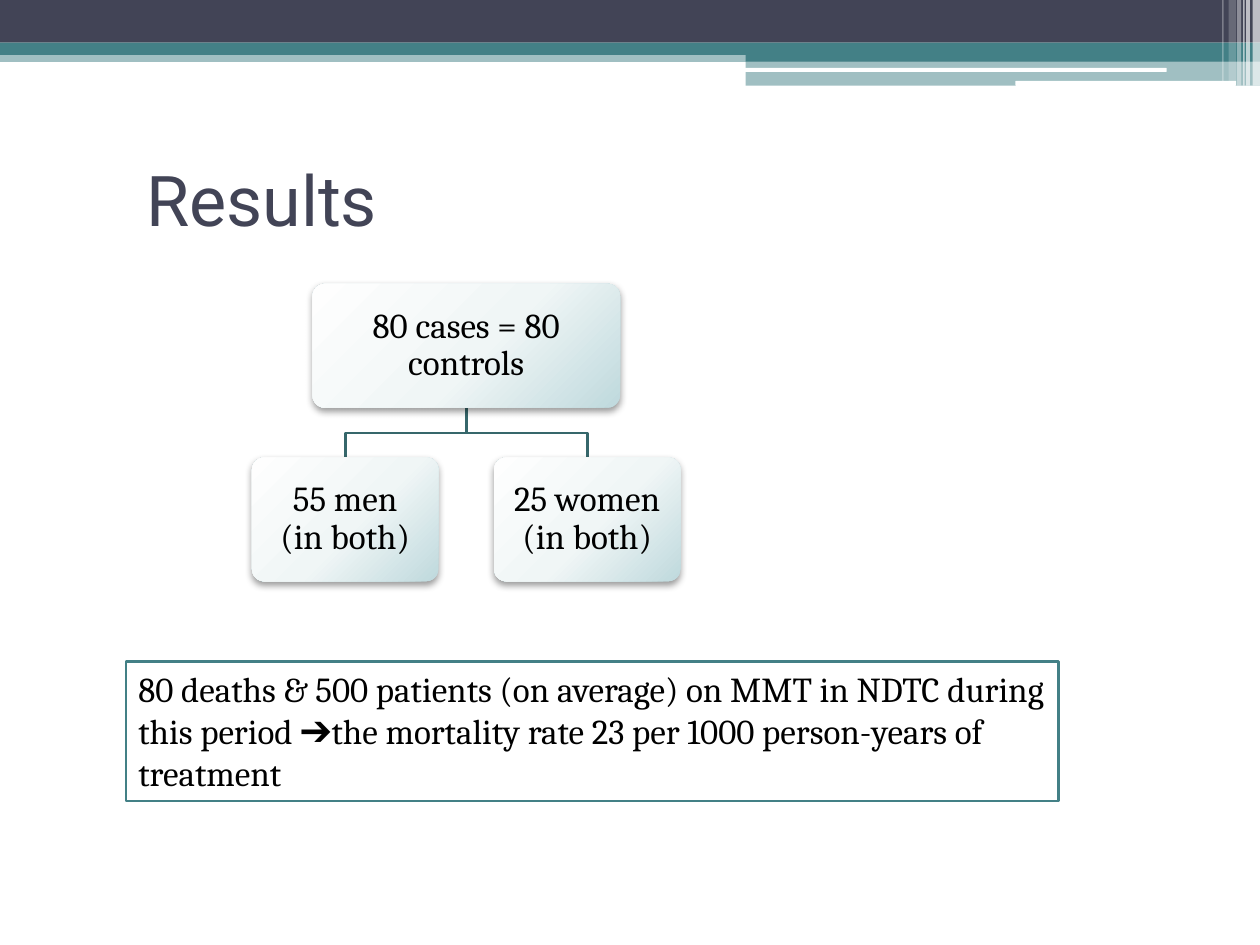
from lxml.etree import SubElement
from pptx import Presentation
from pptx.dml.color import RGBColor
from pptx.enum.shapes import MSO_SHAPE
from pptx.enum.text import MSO_ANCHOR, PP_ALIGN
from pptx.oxml import parse_xml
from pptx.oxml.ns import nsdecls, qn
from pptx.util import Cm, Pt

TEAL, NAVY, WHITE, BLACK = "438086", "424456", "FFFFFF", "000000"


def add_box(kind, x, y, w, h, color, opacity=100):
    sp = s.shapes.add_shape(kind, Cm(x), Cm(y), Cm(w), Cm(h))
    sp.shadow.inherit = False
    sp.fill.solid()
    sp.fill.fore_color.rgb = RGBColor.from_string(color)
    sp.line.fill.background()
    if opacity < 100:
        clr = sp._element.spPr.find(".//" + qn("a:srgbClr"))
        SubElement(clr, qn("a:alpha"), val=str(opacity * 1000))
    return sp


def add_text(sp, text, font, size, color, align=PP_ALIGN.LEFT):
    tf = sp.text_frame
    tf.word_wrap = True
    tf.vertical_anchor = MSO_ANCHOR.MIDDLE
    p = tf.paragraphs[0]
    p.alignment = align
    r = p.add_run()
    r.text = text
    r.font.name = font
    r.font.size = Pt(size)
    r.font.color.rgb = RGBColor.from_string(color)
    return tf


prs = Presentation()
prs.slide_width, prs.slide_height = Cm(25.4), Cm(19.05)
s = prs.slides.add_slide(prs.slide_layouts[6])

# Header bands
for x, y, w, h, color, opacity in [
    (0, 1.02, 25.4, 0.23, TEAL, 50),
    (0, 0, 25.4, 0.86, NAVY, 100),
    (0, 0.86, 25.4, 0.25, TEAL, 100),
    (15.03, 0.99, 10.37, 0.25, TEAL, 100),
    (15.03, 1.23, 10.37, 0.5, TEAL, 50),
]:
    add_box(MSO_SHAPE.RECTANGLE, x, y, w, h, color, opacity)

# White rules in the header
for x, y, w, h in [(15.01, 1.37, 8.51, 0.08), (20.47, 1.63, 4.45, 0.1)]:
    add_box(MSO_SHAPE.ROUNDED_RECTANGLE, x, y, w, h, WHITE)

# Translucent stripes at the right edge
for x, w, h, opacity in [
    (25.25, 0.15, 1.73, 65),
    (25.12, 0.08, 1.73, 65),
    (25.06, 0.03, 1.73, 60),
    (24.94, 0.08, 1.73, 40),
    (24.77, 0.15, 1.63, 20),
    (24.64, 0.03, 1.63, 30),
]:
    add_box(MSO_SHAPE.RECTANGLE, x, 0, w, h, WHITE, opacity)

# Title
title = s.shapes.add_textbox(Cm(1.3), Cm(2.51), Cm(11.63), Cm(2.97))
tf = add_text(title, "Results", "Roboto", 40, NAVY)
tf.margin_left = Cm(1.65)

# Tree links
root_x, root_bottom, bend_y, child_top = 9.4, 8.22, 8.73, 9.22
for child_x in (6.96, 11.84):
    fb = s.shapes.build_freeform(Cm(root_x), Cm(root_bottom))
    fb.add_line_segments(
        [(Cm(x), Cm(y)) for x, y in
         [(root_x, bend_y), (child_x, bend_y), (child_x, child_top)]],
        close=False)
    sp = fb.convert_to_shape()
    sp.shadow.inherit = False
    sp.fill.background()
    sp.line.color.rgb = RGBColor.from_string("36676B")
    sp.line.width = Pt(1.5)

# Tree nodes with a radial gradient and a soft shadow
stops = "".join(
    f'<a:gs pos="{pos * 1000}"><a:srgbClr val="{color}"/></a:gs>'
    for pos, color in [(0, "FEFEFE"), (55, "F0F6F6"), (100, "BFD9DD")])
gradient = (
    f'<a:gradFill {nsdecls("a")} rotWithShape="1"><a:gsLst>{stops}</a:gsLst>'
    '<a:path path="circle">'
    '<a:fillToRect l="-40000" t="-90000" r="140000" b="190000"/>'
    '</a:path></a:gradFill>')
shadow = (
    f'<a:outerShdw {nsdecls("a")} blurRad="{Pt(4.1)}" dist="{Pt(2)}" '
    'dir="5400000" rotWithShape="0"><a:srgbClr val="000000">'
    '<a:alpha val="40000"/></a:srgbClr></a:outerShdw>')
for text, x, y, w in [
    ("80 cases = 80 controls", 6.3, 5.72, 6.2),
    ("55 men (in both)", 5.08, child_top, 3.76),
    ("25 women (in both)", 9.96, child_top, 3.76),
]:
    sp = add_box(MSO_SHAPE.ROUNDED_RECTANGLE, x, y, w, 2.5, WHITE)
    sp.adjustments[0] = 0.1
    spPr = sp._element.spPr
    spPr.replace(spPr.find(qn("a:solidFill")), parse_xml(gradient))
    spPr.find(qn("a:effectLst")).append(parse_xml(shadow))
    tf = add_text(sp, text, "Cambria", 20, BLACK, PP_ALIGN.CENTER)
    tf.margin_left = tf.margin_right = Cm(0.28)
    tf.margin_top = tf.margin_bottom = Cm(0.28)
    tf.paragraphs[0].line_spacing = 0.9

# Mortality box
sp = add_box(MSO_SHAPE.RECTANGLE, 2.54, 13.33, 18.8, 2.82, WHITE)
sp.line.color.rgb = RGBColor.from_string(TEAL)
sp.line.width = Pt(1.5)
tf = add_text(
    sp,
    "80 deaths & 500 patients (on average) on MMT in NDTC during this period "
    "➔the mortality rate 23 per 1000 person-years of treatment",
    "Cambria", 20, BLACK)
tf.vertical_anchor = MSO_ANCHOR.TOP

prs.save("out.pptx")
